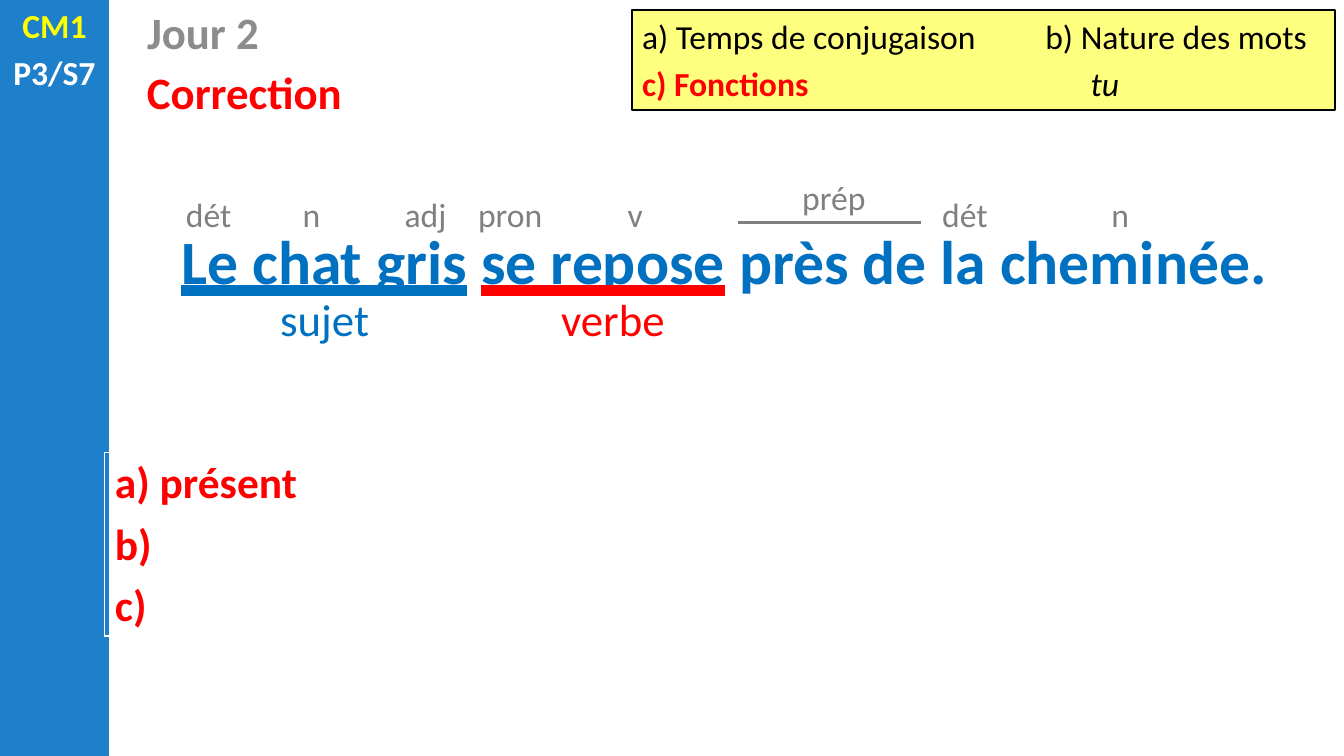
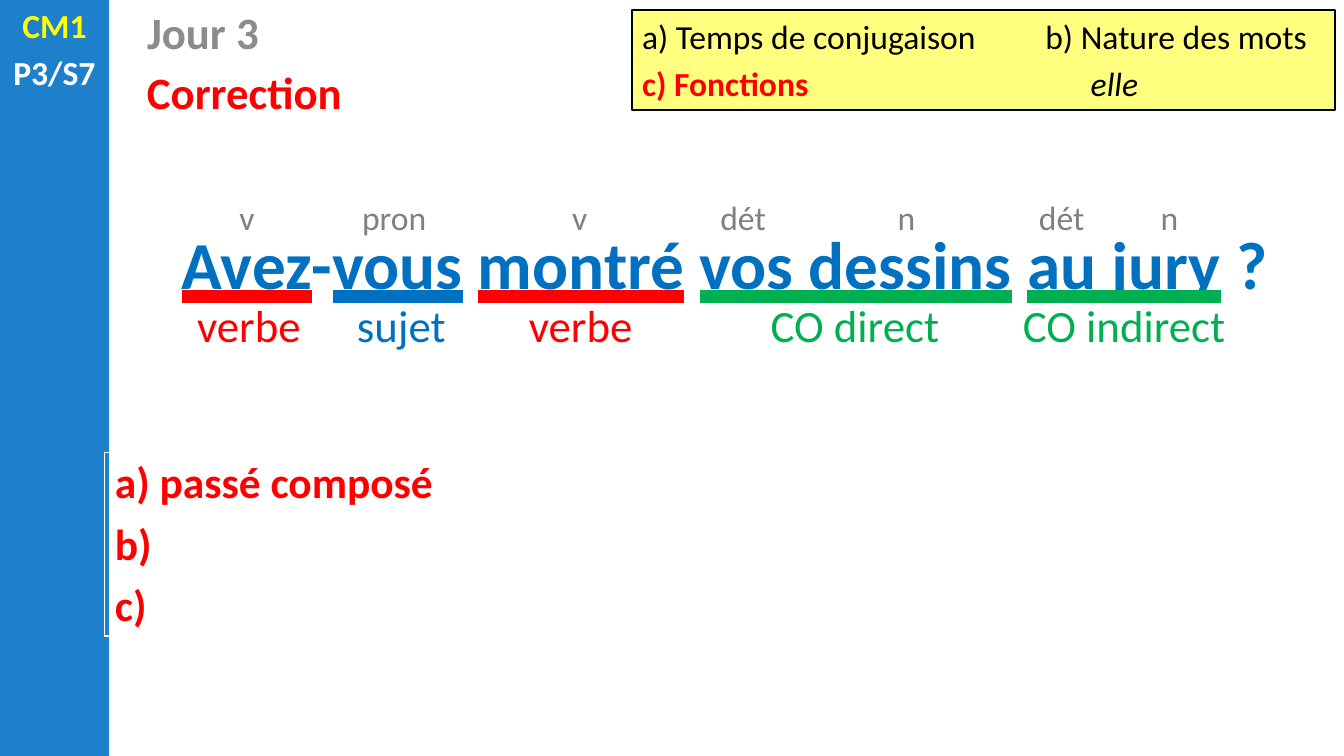
from dataclasses import dataclass
from typing import Any

from lxml.etree import SubElement
from pptx import Presentation
from pptx.dml.color import RGBColor
from pptx.enum.shapes import MSO_CONNECTOR as Connector, MSO_SHAPE as Shape
from pptx.enum.text import MSO_UNDERLINE as Underline, PP_ALIGN as Align
from pptx.oxml.ns import qn
from pptx.util import Emu, Pt

EMU_PER_PX = 9144  # 100 px to the inch
SLIDE_WIDTH, SLIDE_HEIGHT = 1333, 750
SIDEBAR_WIDTH = 108
CONTENT_LEFT, CONTENT_WIDTH = 104, 1229
NATURE_WIDTH, NATURE_HEIGHT = 90, 50
FUNCTION_HEIGHT = 64


@dataclass(frozen=True)
class Theme:
    font: str = "Calibri"
    sidebar: str = "1E7FCB"
    level: str = "FFFF00"
    white: str = "FFFFFF"
    black: str = "000000"
    day: str = "8C8C8C"
    nature: str = "808080"
    blue: str = "0070C0"
    red: str = "FF0000"
    green: str = "00B050"
    small: int = 24
    answer: int = 31
    large: int = 32


THEME = Theme()


@dataclass(frozen=True)
class Box:
    left: int
    top: int
    width: int
    height: int

    def emu(self) -> list[Emu]:
        return [px(n) for n in (self.left, self.top, self.width, self.height)]


@dataclass(frozen=True)
class Segment:
    """Part of the sentence, underlined when it has a function."""
    text: str
    underline: str | None = None


@dataclass(frozen=True)
class Nature:
    text: str
    left: int
    raised: int = 0


@dataclass(frozen=True)
class Function:
    text: str
    left: int
    color: str
    width: int = 124


@dataclass(frozen=True)
class Lesson:
    day: str
    pronoun: str
    tense: str
    sentence: list[Segment]
    sentence_size: int
    sentence_height: int
    nature_top: int
    natures: list[Nature]
    function_top: int
    functions: list[Function]
    group_line: tuple[int, int, int] | None = None  # start, end, top


LESSONS = [
    Lesson(
        "Jour 2", "tu", "présent",
        [Segment("Le chat gris", THEME.blue), Segment(" "),
         Segment("se repose", THEME.red), Segment(" près de la cheminée.")],
        44, 84, 187,
        [Nature("dét", 162), Nature("n", 264), Nature("adj", 377),
         Nature("pron", 461), Nature("v", 585), Nature("prép", 782, raised=16),
         Nature("dét", 912), Nature("n", 1066)],
        284,
        [Function("sujet", 260, THEME.blue), Function("verbe", 546, THEME.red)],
        group_line=(732, 913, 221),
    ),
    Lesson(
        "Jour 3", "elle", "passé composé",
        [Segment("Avez", THEME.red), Segment("-"), Segment("vous", THEME.blue),
         Segment(" "), Segment("montré", THEME.red), Segment(" "),
         Segment("vos dessins", THEME.green), Segment(" "),
         Segment("au jury", THEME.green), Segment(" ?")],
        48, 91, 190,
        [Nature("v", 200), Nature("pron", 346), Nature("v", 530), Nature("dét", 692),
         Nature("n", 854), Nature("dét", 1008), Nature("n", 1115)],
        290,
        [Function("verbe", 185, THEME.red), Function("sujet", 336, THEME.blue),
         Function("verbe", 514, THEME.red),
         Function("CO direct", 731, THEME.green, 234),
         Function("CO indirect", 998, THEME.green, 234)],
    ),
]


def px(length: int) -> Emu:
    return Emu(length * EMU_PER_PX)


def rgb(color: str) -> RGBColor:
    return RGBColor.from_string(color)


def add_run(paragraph: Any, text: str, *, size: int, color: str, bold: bool = False,
            italic: bool = False, underline: str | None = None) -> None:
    run = paragraph.add_run()
    run.text = text
    font = run.font
    font.name, font.size, font.bold, font.italic = THEME.font, Pt(size), bold, italic
    font.color.rgb = rgb(color)
    if underline:
        font.underline = Underline.HEAVY_LINE
        properties = run._r.get_or_add_rPr()
        line_fill = SubElement(properties, qn("a:uFill"))
        solid = SubElement(line_fill, qn("a:solidFill"))
        SubElement(solid, qn("a:srgbClr"), val=underline)
        properties.find(qn("a:latin")).addprevious(line_fill)


def next_paragraph(frame: Any, *, align: Align = Align.LEFT, before: float = 0,
                   after: float = 0, tab: int | None = None) -> Any:
    """Return the empty first paragraph, or a new one after it."""
    first = frame.paragraphs[0]
    is_new = bool(first.runs)
    paragraph = frame.add_paragraph() if is_new else first
    paragraph.alignment = align
    paragraph.space_before = Pt(before if is_new else 0)
    paragraph.space_after = Pt(after)
    if tab is not None:
        tabs = SubElement(paragraph._p.get_or_add_pPr(), qn("a:tabLst"))
        SubElement(tabs, qn("a:tab"), pos=str(px(tab)), algn="l")
    return paragraph


def add_frame(slide: Any, box: Box) -> Any:
    frame = slide.shapes.add_textbox(*box.emu()).text_frame
    frame.word_wrap = True
    return frame


def add_label(slide: Any, text: str, box: Box, *, size: int, color: str,
              bold: bool = False, align: Align = Align.CENTER) -> None:
    paragraph = next_paragraph(add_frame(slide, box), align=align)
    add_run(paragraph, text, size=size, color=color, bold=bold)


def add_rectangle(slide: Any, box: Box, fill: str) -> Any:
    shape = slide.shapes.add_shape(Shape.RECTANGLE, *box.emu())
    shape.shadow.inherit = False
    shape.fill.solid()
    shape.fill.fore_color.rgb = rgb(fill)
    shape.line.fill.background()
    return shape


def add_sidebar(slide: Any) -> None:
    add_rectangle(slide, Box(0, 0, SIDEBAR_WIDTH, SLIDE_HEIGHT), THEME.sidebar)
    frame = add_frame(slide, Box(0, 0, SIDEBAR_WIDTH, 99))
    for text, color in (("CM1", THEME.level), ("P3/S7", THEME.white)):
        paragraph = next_paragraph(frame, align=Align.CENTER, before=THEME.small * 0.2)
        add_run(paragraph, text, size=THEME.small, color=color, bold=True)


def add_titles(slide: Any, day: str) -> None:
    for text, top, width, color in ((day, 0, 791, THEME.day),
                                    ("Correction", 59, 483, THEME.red)):
        add_label(slide, text, Box(136, top, width, 64), size=THEME.large,
                  color=color, bold=True, align=Align.LEFT)


def add_instructions(slide: Any, pronoun: str) -> None:
    shape = add_rectangle(slide, Box(627, 10, 697, 99), THEME.level)
    color = shape.fill._xPr.find(qn("a:solidFill")).find(qn("a:srgbClr"))
    SubElement(color, qn("a:alpha"), val="50000")
    shape.line.color.rgb = rgb(THEME.black)
    shape.line.width = Pt(1.5)
    frame = shape.text_frame
    frame.word_wrap = True
    tense_line = next_paragraph(frame, tab=400)
    add_run(tense_line, "a) Temps de conjugaison\tb) Nature des mots",
            size=THEME.small, color=THEME.black)
    function_line = next_paragraph(frame, before=THEME.small * 0.2, tab=445)
    add_run(function_line, "c) Fonctions\t", size=THEME.small, color=THEME.red, bold=True)
    add_run(function_line, pronoun, size=THEME.small, color=THEME.black, italic=True)


def add_sentence(slide: Any, lesson: Lesson) -> None:
    box = Box(CONTENT_LEFT, 216, CONTENT_WIDTH, lesson.sentence_height)
    paragraph = next_paragraph(add_frame(slide, box), align=Align.CENTER)
    for segment in lesson.sentence:
        add_run(paragraph, segment.text, size=lesson.sentence_size, color=THEME.blue,
                bold=True, underline=segment.underline)


def add_answers(slide: Any, tense: str) -> None:
    box = Box(CONTENT_LEFT, 449, CONTENT_WIDTH, 182)
    table = slide.shapes.add_table(1, 1, *box.emu()).table
    table.first_row = table.horz_banding = False
    cell = table.cell(0, 0)
    cell.fill.background()
    for text in (f"a) {tense}", "b)", "c)"):
        paragraph = next_paragraph(cell.text_frame, after=6)
        add_run(paragraph, text, size=THEME.answer, color=THEME.red, bold=True)


def add_group_line(slide: Any, start: int, end: int, top: int) -> None:
    line = slide.shapes.add_connector(Connector.STRAIGHT, px(start), px(top),
                                      px(end), px(top))
    line.line.color.rgb = rgb(THEME.nature)
    line.line.width = Pt(2.25)
    SubElement(line._element.spPr, qn("a:effectLst"))


def add_lesson(presentation: Any, lesson: Lesson) -> None:
    slide = presentation.slides.add_slide(presentation.slide_layouts[6])
    # Shared frame
    add_sidebar(slide)
    add_titles(slide, lesson.day)
    add_instructions(slide, lesson.pronoun)
    # Sentence with word natures above and functions below
    add_sentence(slide, lesson)
    for nature in lesson.natures:
        box = Box(nature.left, lesson.nature_top - nature.raised,
                  NATURE_WIDTH, NATURE_HEIGHT)
        add_label(slide, nature.text, box, size=THEME.small, color=THEME.nature)
    for function in lesson.functions:
        box = Box(function.left, lesson.function_top, function.width, FUNCTION_HEIGHT)
        add_label(slide, function.text, box, size=THEME.large, color=function.color)
    if lesson.group_line:
        add_group_line(slide, *lesson.group_line)
    # Answers
    add_answers(slide, lesson.tense)


def main() -> None:
    presentation = Presentation()
    presentation.slide_width = px(SLIDE_WIDTH)
    presentation.slide_height = px(SLIDE_HEIGHT)
    for lesson in LESSONS:
        add_lesson(presentation, lesson)
    presentation.save("out.pptx")


if __name__ == "__main__":
    main()
